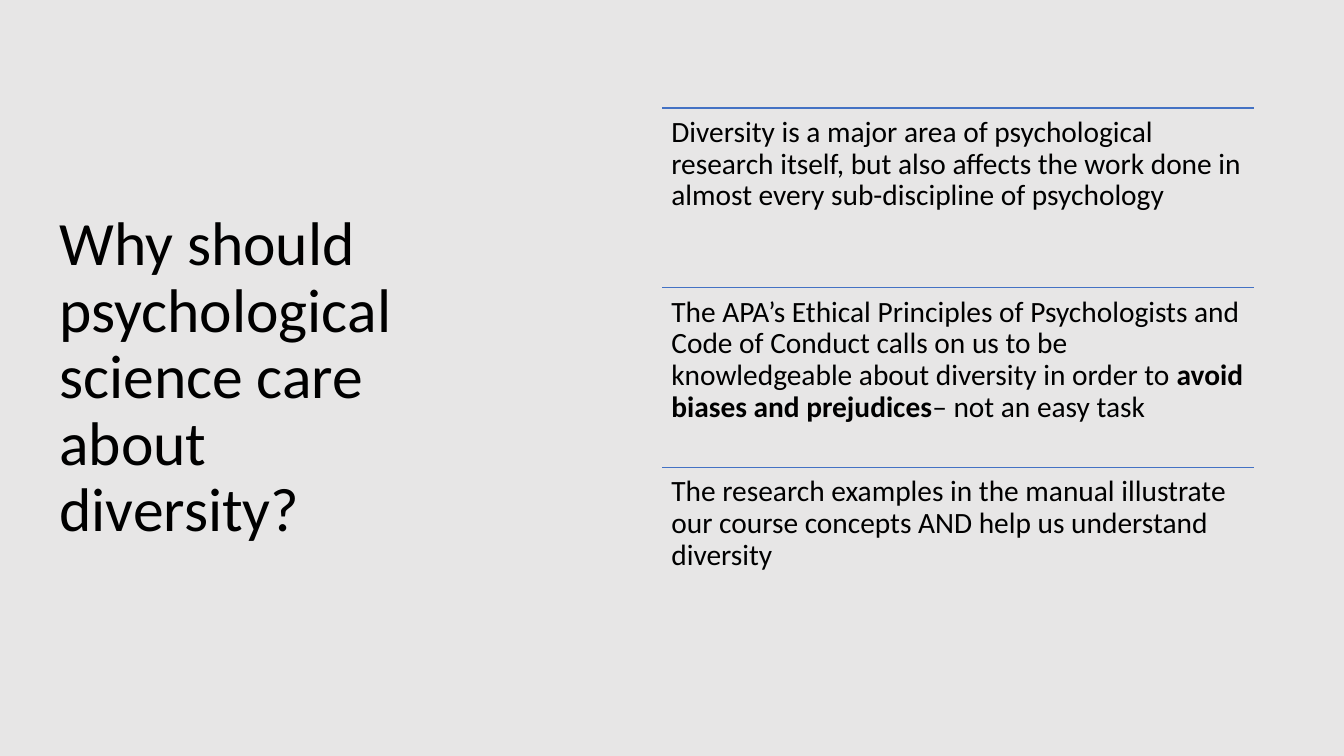
"""Build a slide with a question on the left and three ruled statements on the right."""
from dataclasses import dataclass

from lxml import etree
from pptx import Presentation
from pptx import util as u
from pptx.dml.color import RGBColor
from pptx.enum import shapes, text
from pptx.oxml import ns


@dataclass(frozen=True)
class Theme:
    """Colours, font and type sizes of the slide."""
    background: RGBColor = RGBColor(0xE7, 0xE6, 0xE6)
    ink: RGBColor = RGBColor(0, 0, 0)
    rule: RGBColor = RGBColor(0x44, 0x72, 0xC4)
    font: str = "Calibri"
    title_size: u.Pt = u.Pt(44)
    statement_size: u.Pt = u.Pt(21)


THEME = Theme()
QUESTION = "Why should psychological science care about diversity?"
STATEMENTS = [
    [("Diversity is a major area of psychological research itself, but also affects "
      "the work done in almost every sub-discipline of psychology", False)],
    [("The APA’s Ethical Principles of Psychologists and Code of Conduct calls on us "
      "to be knowledgeable about diversity in order to ", False),
     ("avoid biases and prejudices", True),
     ("– not an easy task", False)],
    [("The research examples in the manual illustrate our course concepts AND help us "
      "understand diversity", False)],
]
LEFT, TOP, WIDTH = u.Cm(16.69), u.Cm(2.72), u.Cm(14.91)
PITCH = u.Cm(4.53)
INSET = u.Cm(0.23)


def style_span(span, size, bold=False):
    """Apply the theme font to one run."""
    span.font.name = THEME.font
    span.font.size = size
    span.font.bold = bold
    span.font.color.rgb = THEME.ink


def add_title(page, wording):
    """Fill and place the title placeholder."""
    box = page.shapes.title
    box.left, box.top = u.Cm(1.24), u.Cm(4.83)
    box.width, box.height = u.Cm(10.4), u.Cm(9.42)
    frame = box.text_frame
    frame.text = wording
    frame.word_wrap = True
    frame.auto_size = text.MSO_AUTO_SIZE.NONE
    frame.vertical_anchor = text.MSO_ANCHOR.MIDDLE
    para = frame.paragraphs[0]
    para.alignment = text.PP_ALIGN.LEFT
    para.line_spacing = 0.9
    style_span(para.runs[0], THEME.title_size)


def add_rule(page, top):
    """Draw the thin line above a statement."""
    rule = page.shapes.add_connector(
        shapes.MSO_CONNECTOR.STRAIGHT, LEFT, top, LEFT + WIDTH, top)
    rule.line.color.rgb = THEME.rule
    rule.line.width = u.Pt(1)
    etree.SubElement(rule._element.spPr, ns.qn("a:effectLst"))


def add_statement(page, top, pieces):
    """Write a statement from pieces of regular and bold wording."""
    box = page.shapes.add_textbox(LEFT, top, WIDTH, PITCH)
    frame = box.text_frame
    frame.word_wrap = True
    frame.margin_left = frame.margin_right = INSET
    frame.margin_top = frame.margin_bottom = INSET
    para = frame.paragraphs[0]
    para.line_spacing = 0.9
    para.space_after = u.Pt(7)
    for wording, bold in pieces:
        span = para.add_run()
        span.text = wording
        style_span(span, THEME.statement_size, bold)


def main():
    """Build and save the deck."""
    deck = Presentation()
    deck.slide_width, deck.slide_height = u.Cm(33.87), u.Cm(19.05)
    page = deck.slides.add_slide(deck.slide_layouts.get_by_name("Title Only"))
    page.background.fill.solid()
    page.background.fill.fore_color.rgb = THEME.background
    add_title(page, QUESTION)
    for index, pieces in enumerate(STATEMENTS):
        top = TOP + index * PITCH
        add_rule(page, top)
        add_statement(page, top, pieces)
    deck.save("out.pptx")


if __name__ == "__main__":
    main()
